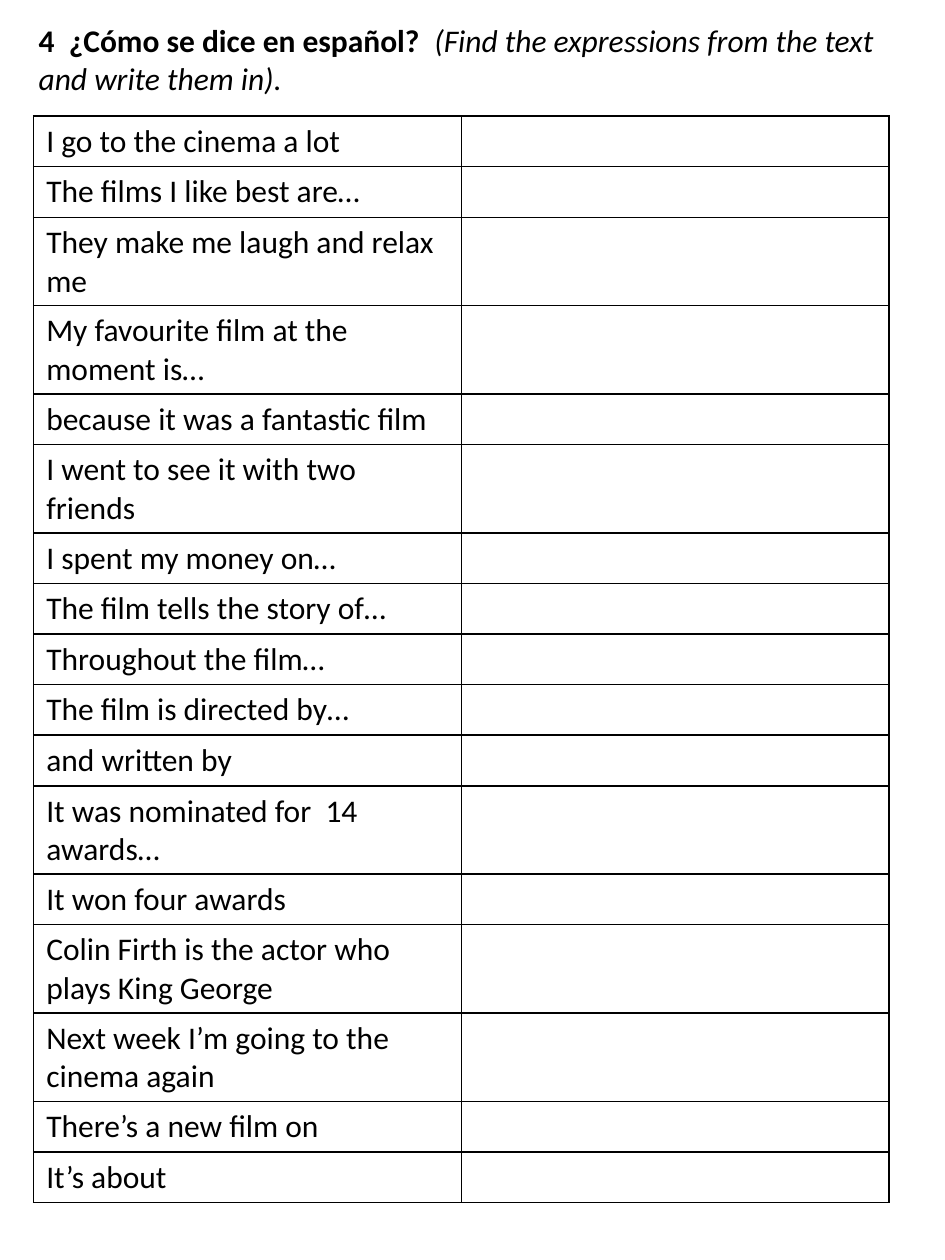
from lxml import etree
from pptx import Presentation
from pptx.dml.color import RGBColor
from pptx.oxml.ns import qn
from pptx.util import Cm, Pt

BLACK = RGBColor(0, 0, 0)
FONT = "Calibri"
TEXT_SIZE = Pt(18)
BORDER_WIDTH = Pt(1)

HEADING = "4  ¿Cómo se dice en español?  "
INSTRUCTION = "(Find the expressions from the text and write them in)."

# Expression and the number of lines it takes
EXPRESSIONS = [
    ("I go to the cinema a lot", 1),
    ("The films I like best are…", 1),
    ("They make me laugh and relax me", 2),
    ("My favourite film at the moment is…", 2),
    ("because it was a fantastic film", 1),
    ("I went to see it with two friends", 2),
    ("I spent my money on…", 1),
    ("The film tells the story of…", 1),
    ("Throughout the film…", 1),
    ("The film is directed by…", 1),
    ("and written by", 1),
    ("It was nominated for  14 awards…", 2),
    ("It won four awards", 1),
    ("Colin Firth is the actor who plays King George", 2),
    ("Next week I’m going to the cinema again", 2),
    ("There’s a new film on", 1),
    ("It’s about", 1),
]
ROW_HEIGHTS = {1: Cm(1.02), 2: Cm(1.78)}
COLUMN_WIDTH = Cm(8.62)


def style_font(font, bold=False, italic=False):
    font.name = FONT
    font.size = TEXT_SIZE
    font.color.rgb = BLACK
    font.bold = bold
    font.italic = italic


def add_borders(cell):
    properties = cell._tc.get_or_add_tcPr()
    for side in ("a:lnL", "a:lnR", "a:lnT", "a:lnB"):
        line = etree.SubElement(properties, qn(side), w=str(BORDER_WIDTH))
        fill = etree.SubElement(line, qn("a:solidFill"))
        etree.SubElement(fill, qn("a:srgbClr"), val=str(BLACK))


presentation = Presentation()
presentation.slide_width = Cm(19.05)
presentation.slide_height = Cm(25.4)
slide = presentation.slides.add_slide(presentation.slide_layouts[6])

# Heading with the task
heading_box = slide.shapes.add_textbox(Cm(0.53), Cm(0.3), Cm(17.65), Cm(1.8))
heading_box.text_frame.word_wrap = True
paragraph = heading_box.text_frame.paragraphs[0]
for text, is_heading in ((HEADING, True), (INSTRUCTION, False)):
    run = paragraph.add_run()
    run.text = text
    style_font(run.font, bold=is_heading, italic=not is_heading)

# Expressions on the left, empty answer cells on the right
table_height = sum(ROW_HEIGHTS[lines] for _, lines in EXPRESSIONS)
table = slide.shapes.add_table(
    len(EXPRESSIONS), 2, Cm(0.68), Cm(2.34), 2 * COLUMN_WIDTH, table_height
).table
table.first_row = False
table.horz_banding = False
for column in table.columns:
    column.width = COLUMN_WIDTH

for row, (expression, lines) in zip(table.rows, EXPRESSIONS):
    row.height = ROW_HEIGHTS[lines]
    row.cells[0].text_frame.text = expression
    for cell in row.cells:
        add_borders(cell)
        cell.fill.background()
        paragraph = cell.text_frame.paragraphs[0]
        style_font(paragraph.font)
        for run in paragraph.runs:
            style_font(run.font)

presentation.save("out.pptx")
